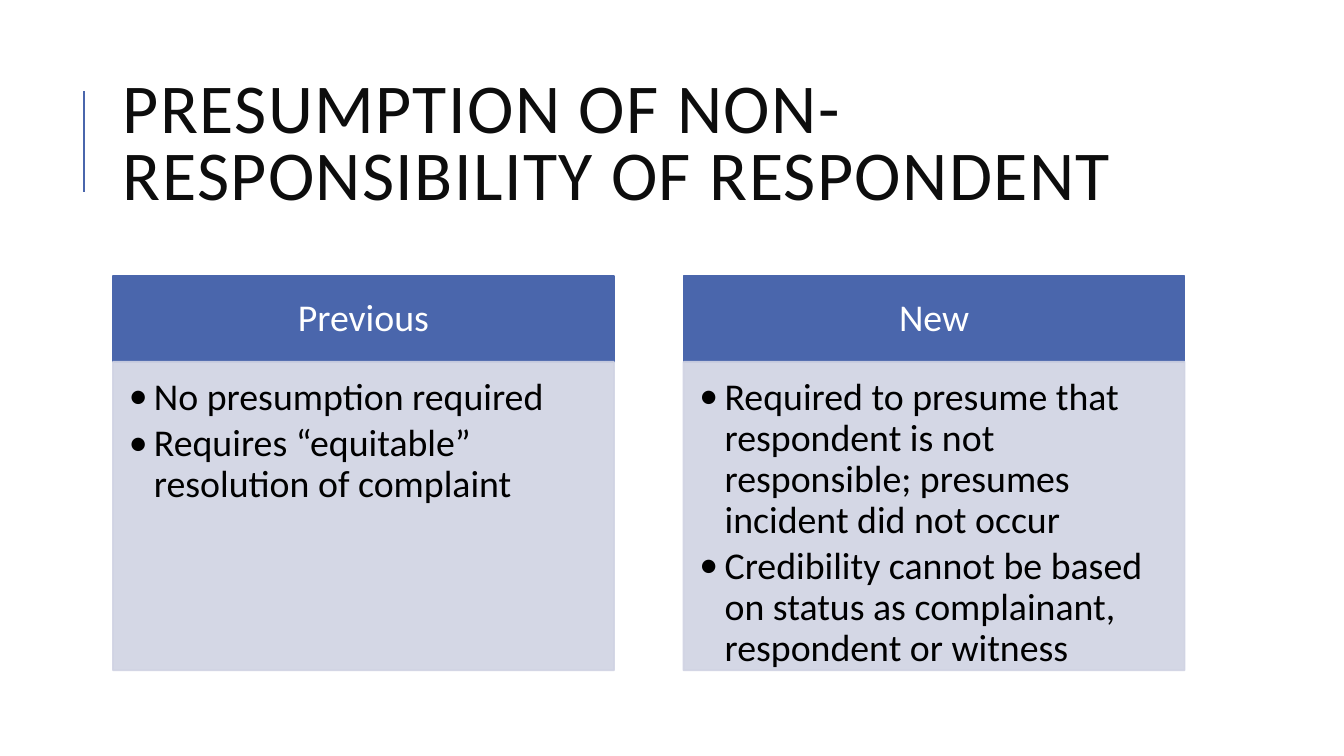
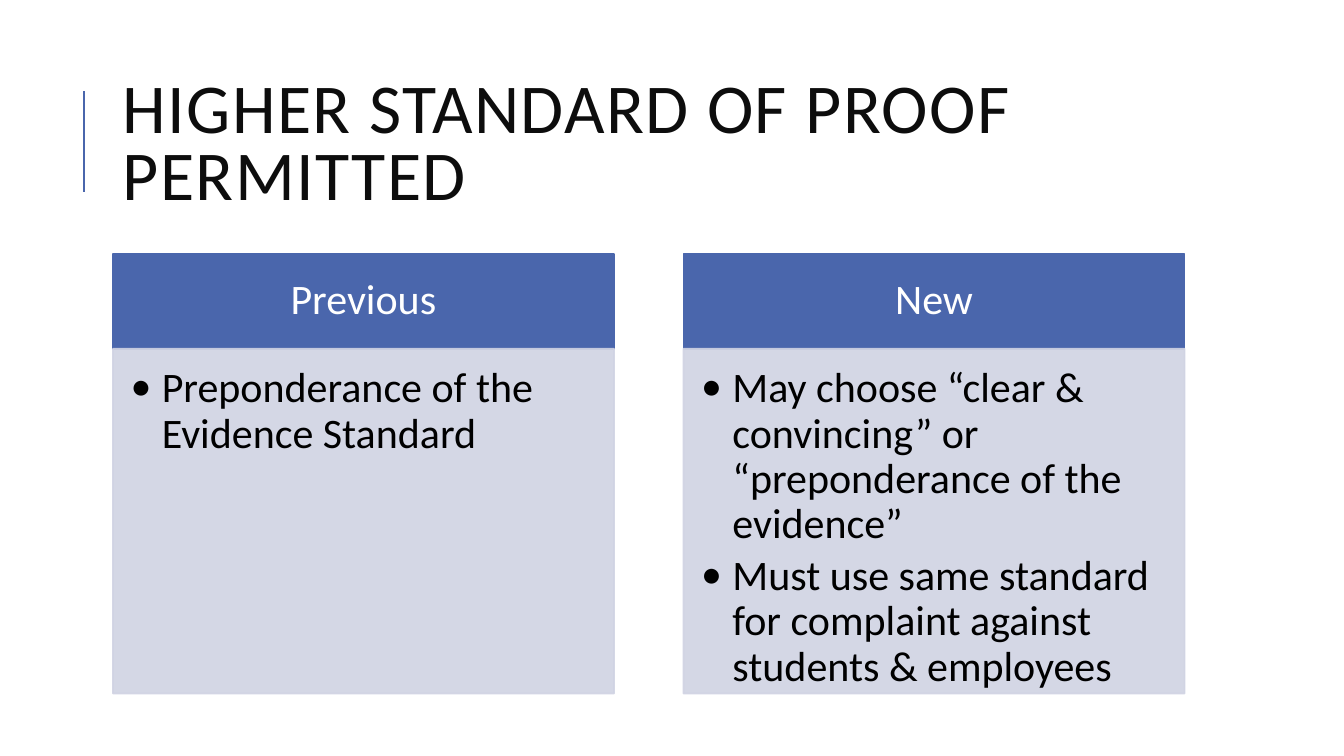
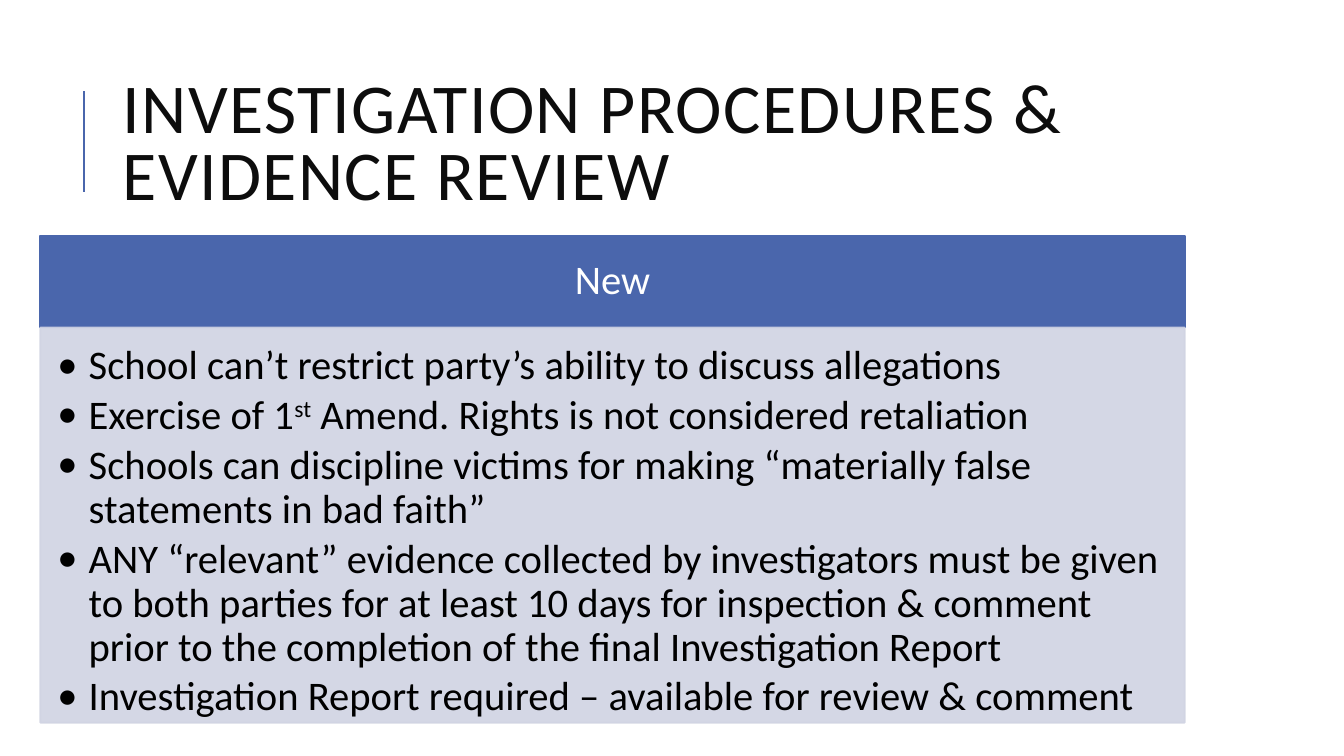
"""Build three slides comparing previous and new complaint procedures."""
from lxml import etree
from pptx import Presentation, util as u
from pptx.dml.color import RGBColor
from pptx.enum import shapes, text
from pptx.oxml.ns import qn

COLORS = {"accent": "4A66AC", "panel": "D0D3E3", "title": "0D0D0D", "light": "FFFFFF", "body": "000000"}
FONT = "Calibri"
RIGHT_EDGE = 11.75
GUTTER = 0.69

SLIDES = [
    {"title": "PRESUMPTION OF NON-RESPONSIBILITY OF RESPONDENT",
     "left": 1.12, "top": 2.74, "heights": (0.85, 3.06), "size": 27, "indent": 0.25,
     "panels": [
         ("Previous", ["No presumption required",
                       "Requires “equitable” resolution of complaint"]),
         ("New", ["Required to presume that respondent is not responsible; presumes incident did not occur",
                  "Credibility cannot be based on status as complainant, respondent or witness"])]},
    {"title": "HIGHER STANDARD OF PROOF PERMITTED",
     "left": 1.12, "top": 2.52, "heights": (0.94, 3.42), "size": 30, "indent": 0.31,
     "panels": [
         ("Previous", ["Preponderance of the Evidence Standard"]),
         ("New", ["May choose “clear & convincing” or “preponderance of the evidence”",
                  "Must use same standard for complaint against students & employees"])]},
    {"title": "INVESTIGATION PROCEDURES & EVIDENCE REVIEW",
     "left": 0.4, "top": 2.34, "heights": (0.91, 3.92), "size": 29, "indent": 0.31,
     "panels": [
         ("New", ["School can’t restrict party’s ability to discuss allegations",
                  "Exercise of 1^st^ Amend. Rights is not considered retaliation",
                  "Schools can discipline victims for making “materially false statements in bad faith”",
                  "ANY “relevant” evidence collected by investigators must be given to both parties for "
                  "at least 10 days for inspection & comment prior to the completion of the final "
                  "Investigation Report",
                  "Investigation Report required – available for review & comment"])]},
]


def rgb(name):
    """Return the named colour."""
    return RGBColor.from_string(COLORS[name])


def style_run(run, size, color):
    """Set the font of a run."""
    run.font.name, run.font.size = FONT, u.Pt(size)
    run.font.color.rgb = rgb(color)


def set_insets(frame, insets):
    """Wrap the frame and set left, top, right and bottom insets in inches."""
    frame.word_wrap = True
    frame.margin_left, frame.margin_top, frame.margin_right, frame.margin_bottom = map(u.Inches, insets)


def add_title(slide, wording):
    """Add the accent rule and the title."""
    rule = slide.shapes.add_connector(shapes.MSO_CONNECTOR.STRAIGHT, *map(u.Inches, (0.83, 1.9, 0.83, 0.9)))
    rule.line.color.rgb, rule.line.width = rgb("accent"), u.Pt(1.5)
    etree.SubElement(rule._element.spPr, qn("a:effectLst"))
    frame = slide.shapes.add_textbox(*map(u.Inches, (1.12, 0.64, 10.63, 1.64))).text_frame
    set_insets(frame, (0.1, 0.05, 0.1, 0.05))
    frame.vertical_anchor = text.MSO_ANCHOR.MIDDLE
    heading = frame.paragraphs[0]
    heading.text, heading.line_spacing = wording, 0.8
    style_run(heading.runs[0], 50, "title")
    heading.runs[0]._r.get_or_add_rPr().set("spc", "100")


def add_block(slide, box, color, insets, anchor):
    """Add a filled rectangle and return it."""
    block = slide.shapes.add_shape(shapes.MSO_SHAPE.RECTANGLE, *map(u.Inches, box))
    block.shadow.inherit = False
    block.fill.solid()
    block.fill.fore_color.rgb = block.line.color.rgb = rgb(color)
    block.line.width = u.Pt(1.25)
    set_insets(block.text_frame, insets)
    block.text_frame.vertical_anchor = anchor
    return block


def add_bullet(paragraph, wording, size, indent):
    """Fill a bulleted paragraph; carets enclose superscript."""
    props = paragraph._p.get_or_add_pPr()
    props.set("marL", str(u.Inches(indent)))
    props.set("indent", str(-u.Inches(indent)))
    etree.SubElement(props, qn("a:buFont"), typeface=FONT)
    etree.SubElement(props, qn("a:buChar"), char="•")
    paragraph.alignment = text.PP_ALIGN.LEFT
    paragraph.line_spacing, paragraph.space_after = 0.9, u.Pt(size * 0.15)
    for position, part in enumerate(wording.split("^")):
        run = paragraph.add_run()
        run.text = part
        style_run(run, size, "body")
        if position % 2:
            run._r.get_or_add_rPr().set("baseline", "30000")


def add_panel(slide, left, width, content, heading, points):
    """Add a heading band with its bulleted body."""
    size, top = content["size"], content["top"]
    head_height, body_height = content["heights"]
    em = size / 72
    band = add_block(slide, (left, top, width, head_height), "accent",
                     (0.56 * em, 0.32 * em, 0.56 * em, 0.32 * em), text.MSO_ANCHOR.MIDDLE)
    label = band.text_frame.paragraphs[0]
    label.text, label.alignment, label.line_spacing = heading, text.PP_ALIGN.CENTER, 0.9
    style_run(label.runs[0], size, "light")

    body = add_block(slide, (left, top + head_height, width, body_height), "panel",
                     (0.42 * em, 0.42 * em, 0.56 * em, 0.63 * em), text.MSO_ANCHOR.TOP)
    for tint in body._element.spPr.iter(qn("a:srgbClr")):
        etree.SubElement(tint, qn("a:alpha"), val="90000")
    frame = body.text_frame
    for position, point in enumerate(points):
        paragraph = frame.add_paragraph() if position else frame.paragraphs[0]
        add_bullet(paragraph, point, size, content["indent"])


def main():
    """Build and save the presentation."""
    deck = Presentation()
    deck.slide_width, deck.slide_height = u.Inches(13.33), u.Inches(7.5)
    for content in SLIDES:
        slide = deck.slides.add_slide(deck.slide_layouts[6])
        add_title(slide, content["title"])
        count = len(content["panels"])
        width = (RIGHT_EDGE - content["left"] - GUTTER * (count - 1)) / count
        for column, (heading, points) in enumerate(content["panels"]):
            add_panel(slide, content["left"] + column * (width + GUTTER), width, content, heading, points)
    deck.save("out.pptx")


if __name__ == "__main__":
    main()
